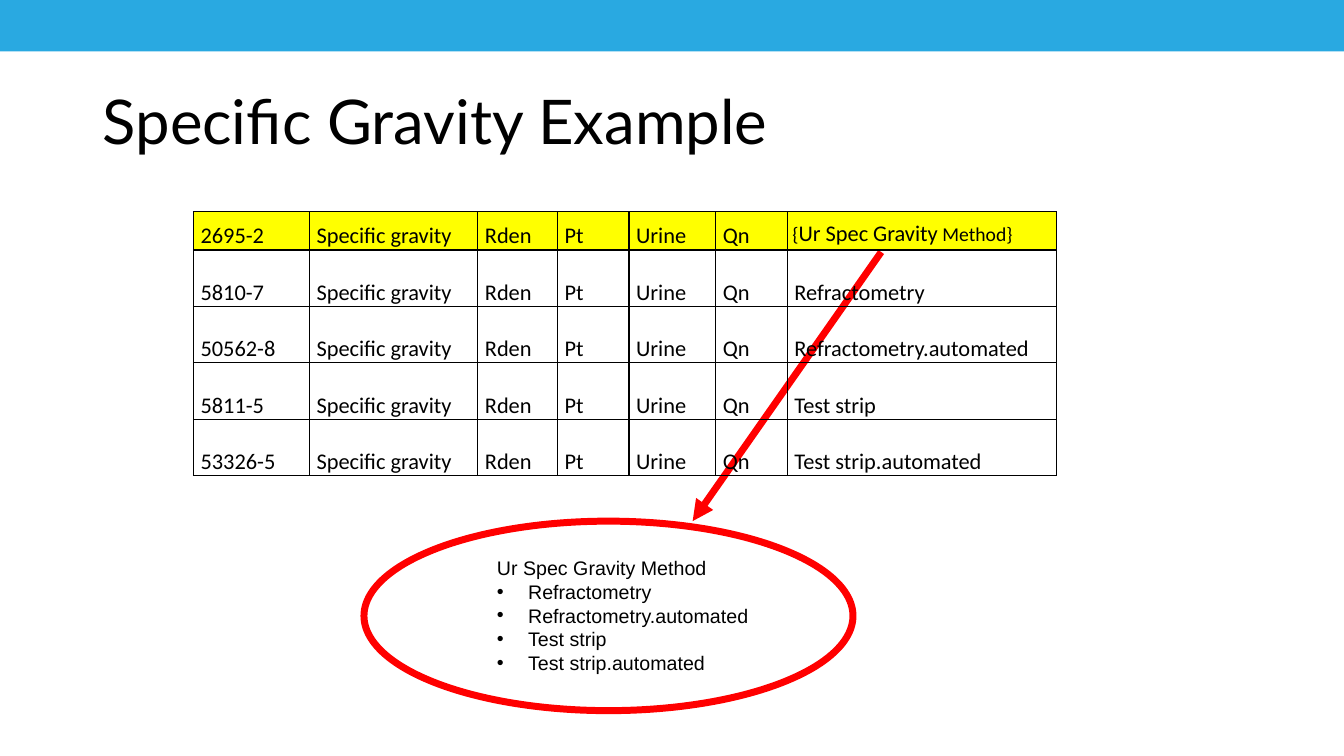
from lxml import etree
from pptx import Presentation, util as u
from pptx.dml.color import RGBColor
from pptx.enum import shapes, text
from pptx.oxml import ns

PX = 9144  # 100 px to the inch
BLUE = RGBColor(0x29, 0xA9, 0xE1)
YELLOW = RGBColor(0xFF, 0xFF, 0x00)
RED = RGBColor(0xFF, 0x00, 0x00)
BLACK = RGBColor(0x00, 0x00, 0x00)

COLUMN_WIDTHS = [115, 167, 79, 71, 86, 71, 267]
ROW_HEIGHTS = [38, 56, 56, 56, 56]
SHARED_VALUES = ["Specific gravity", "Rden", "Pt", "Urine", "Qn"]
CODES_AND_METHODS = [
    ("2695-2", ""),
    ("5810-7", "Refractometry"),
    ("50562-8", "Refractometry.automated"),
    ("5811-5", "Test strip"),
    ("53326-5", "Test strip.automated"),
]


def emu(*lengths):
    return [u.Emu(length * PX) for length in lengths]


def set_attributes(target, values):
    for name, value in values.items():
        setattr(target, name, value)


def add_run(paragraph, words, font_name, size):
    run = paragraph.add_run()
    run.text = words
    set_attributes(run.font, {"name": font_name, "size": u.Pt(size)})
    run.font.color.rgb = BLACK


def add_child(parent, tag, **attributes):
    return etree.SubElement(parent, ns.qn(tag), attributes)


def add_top_bar(slide, box):
    bar = slide.shapes.add_shape(shapes.MSO_SHAPE.RECTANGLE, *emu(*box))
    bar.shadow.inherit = False
    bar.fill.solid()
    bar.fill.fore_color.rgb = BLUE
    bar.line.fill.background()


def fill_title(slide, box):
    title = slide.shapes.title
    set_attributes(title, dict(zip(("left", "top", "width", "height"), emu(*box))))
    set_attributes(title.text_frame, {
        "vertical_anchor": text.MSO_ANCHOR.MIDDLE,
        "auto_size": text.MSO_AUTO_SIZE.NONE,
        "word_wrap": True,
    })
    paragraph = title.text_frame.paragraphs[0]
    set_attributes(paragraph, {"alignment": text.PP_ALIGN.LEFT, "line_spacing": 0.9})
    add_run(paragraph, "Specific Gravity Example", "Lato", 44)


def add_text_box(slide, box):
    """Add an unwrapped text box and return its text frame."""
    frame = slide.shapes.add_textbox(*emu(*box)).text_frame
    frame.word_wrap = False
    return frame


def add_method_list(slide, box):
    """Add an ellipse with the method group and its members listed inside."""
    left, top, width, height = box
    frame = add_text_box(slide, (left + 122, top + 30, 272, 128))
    add_run(frame.paragraphs[0], "Ur Spec Gravity Method", "Arial", 14)
    for code, method in CODES_AND_METHODS[1:]:
        paragraph = frame.add_paragraph()
        add_run(paragraph, method, "Arial", 14)
        properties = paragraph._p.get_or_add_pPr()
        properties.set("marL", str(31 * PX))
        properties.set("indent", str(-31 * PX))
        add_child(properties, "a:buFont", typeface="Arial")
        add_child(properties, "a:buChar", char="•")
    ellipse = slide.shapes.add_shape(shapes.MSO_SHAPE.OVAL, *emu(*box))
    ellipse.shadow.inherit = False
    ellipse.fill.background()
    ellipse.line.color.rgb = RED
    ellipse.line.width = u.Pt(5)


def add_arrow(slide, start, end):
    arrow = slide.shapes.add_connector(shapes.MSO_CONNECTOR.STRAIGHT, *emu(*start, *end))
    arrow.line.color.rgb = RED
    arrow.line.width = u.Pt(5)
    add_child(arrow.line._get_or_add_ln(), "a:tailEnd", type="triangle")
    add_child(arrow._element.spPr, "a:effectLst")


def format_cell(cell, words, fill_color):
    set_attributes(cell, {
        "margin_left": u.Emu(7 * PX), "margin_right": u.Emu(7 * PX),
        "margin_top": 0, "margin_bottom": 0,
        "vertical_anchor": text.MSO_ANCHOR.BOTTOM,
    })
    properties = cell._tc.get_or_add_tcPr()
    for side in ("a:lnL", "a:lnR", "a:lnT", "a:lnB"):
        border = add_child(properties, side, w=str(u.Pt(1)))
        add_child(add_child(border, "a:solidFill"), "a:srgbClr", val=str(BLACK))
    if fill_color:
        cell.fill.solid()
        cell.fill.fore_color.rgb = fill_color
    else:
        cell.fill.background()
    if words:
        add_run(cell.text_frame.paragraphs[0], words, "Calibri", 16)


def add_code_table(slide, left, top):
    box = (left, top, sum(COLUMN_WIDTHS), sum(ROW_HEIGHTS))
    table = slide.shapes.add_table(len(ROW_HEIGHTS), len(COLUMN_WIDTHS), *emu(*box)).table
    set_attributes(table, {"first_row": False, "horz_banding": False})
    for column, width in zip(table.columns, emu(*COLUMN_WIDTHS)):
        column.width = width
    for row, height in zip(table.rows, emu(*ROW_HEIGHTS)):
        row.height = height
    for row_index, (code, method) in enumerate(CODES_AND_METHODS):
        fill_color = YELLOW if row_index == 0 else None
        for column_index, words in enumerate([code, *SHARED_VALUES, method]):
            format_cell(table.cell(row_index, column_index), words, fill_color)

    method_left = left + sum(COLUMN_WIDTHS[:-1])
    label = add_text_box(slide, (method_left - 5, top + 3, 242, 37)).paragraphs[0]
    for words, size in (("{", 14), ("Ur Spec Gravity", 16), (" Method}", 14)):
        add_run(label, words, "Calibri", size)


def main():
    presentation = Presentation()
    presentation.slide_width, presentation.slide_height = emu(1333, 750)
    slide = presentation.slides.add_slide(presentation.slide_layouts[5])
    add_top_bar(slide, (0, 0, 1333, 51))
    fill_title(slide, (92, 62, 1150, 123))
    add_method_list(slide, (361, 517, 485, 188))
    add_arrow(slide, (874, 250), (687, 517))
    add_code_table(slide, 192, 210)
    presentation.save("out.pptx")


if __name__ == "__main__":
    main()
